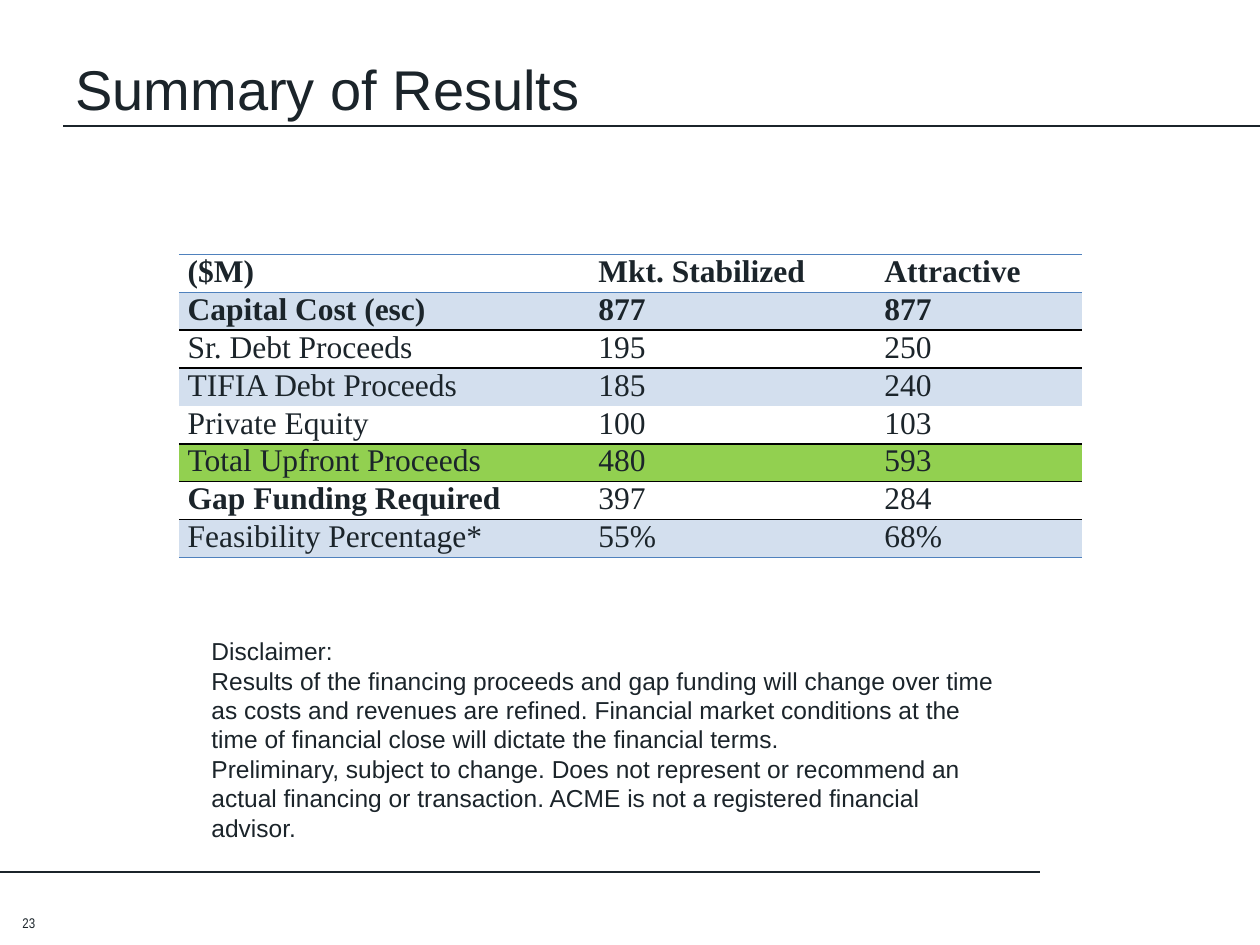
from dataclasses import dataclass

from lxml.etree import SubElement
from pptx import Presentation
from pptx.dml.color import RGBColor
from pptx.enum.shapes import MSO_CONNECTOR
from pptx.enum.text import MSO_ANCHOR
from pptx.oxml import parse_xml
from pptx.oxml.ns import nsdecls, qn
from pptx.util import Inches, Pt


@dataclass(frozen=True)
class Theme:
    ink: str = "1B242A"
    band: str = "D3DFEE"
    total: str = "92D050"
    frame: str = "4F81BD"
    rule: str = "000000"
    sans: str = "Arial"
    narrow: str = "Arial Narrow"
    serif: str = "Times New Roman"
    title_size: int = 32
    table_size: int = 18
    body_size: int = 14
    number_size: int = 8
    line_width: float = 0.75


THEME = Theme()
NO_GRID_STYLE = "{2D5ABB26-0587-4C30-8999-92F81FD0307C}"

TITLE = "Summary of Results"
DISCLAIMER = [
    "Disclaimer:",
    "Results of the financing proceeds and gap funding will change over time as costs "
    "and revenues are refined. Financial market conditions at the time of financial "
    "close will dictate the financial terms.",
    "Preliminary, subject to change. Does not represent or recommend an actual "
    "financing or transaction. ACME is not a registered financial advisor.",
]
PAGE_NUMBER = "23"

# Cell texts, number of leading bold cells, fill, colour of the line below
RESULTS = [
    (("($M)", "Mkt. Stabilized", "Attractive"), 3, None, THEME.frame),
    (("Capital Cost (esc)", "877", "877"), 3, THEME.band, THEME.rule),
    (("Sr. Debt Proceeds", "195", "250"), 0, None, None),
    (("TIFIA Debt Proceeds", "185", "240"), 0, THEME.band, None),
    (("Private Equity", "100", "103"), 0, None, THEME.rule),
    (("Total Upfront Proceeds", "480", "593"), 0, THEME.total, THEME.rule),
    (("Gap Funding Required", "397", "284"), 1, None, None),
    (("Feasibility Percentage*", "55%", "68%"), 0, THEME.band, THEME.frame),
]
COLUMN_WIDTHS = (3.26, 2.27, 1.64)
ROW_HEIGHT = 0.3


def style_font(font, name, size, bold=False):
    font.name = name
    font.size = Pt(size)
    font.bold = bold
    font.color.rgb = RGBColor.from_string(THEME.ink)


def add_text(page, place, texts, name, size, anchor=MSO_ANCHOR.TOP):
    box = page.shapes.add_textbox(*map(Inches, place))
    frame = box.text_frame
    frame.word_wrap = True
    frame.vertical_anchor = anchor
    frame.text = "\n".join(texts)
    for paragraph in frame.paragraphs:
        style_font(paragraph.font, name, size)
    return box


def add_rule(page, start_x, end_x, y):
    line = page.shapes.add_connector(
        MSO_CONNECTOR.STRAIGHT, Inches(start_x), Inches(y), Inches(end_x), Inches(y)
    )
    line.line.color.rgb = RGBColor.from_string(THEME.ink)
    line.line.width = Pt(THEME.line_width)
    SubElement(line._element.spPr, qn("a:effectLst"))


def add_border(cell, edge, color):
    """Draw a 1 pt line on an edge (lnT or lnB), ahead of the cell's fill."""
    border = parse_xml(
        f'<a:{edge} {nsdecls("a")} w="{Pt(1)}"><a:solidFill>'
        f'<a:srgbClr val="{color}"/></a:solidFill></a:{edge}>'
    )
    cell._tc.get_or_add_tcPr().insert(0, border)


def fill_cell(cell, text, bold, fill, above, below):
    cell.margin_left = cell.margin_right = Inches(0.07)
    cell.margin_top = cell.margin_bottom = 0
    cell.text = text
    style_font(cell.text_frame.paragraphs[0].font, THEME.serif, THEME.table_size, bold)
    if fill:
        cell.fill.solid()
        cell.fill.fore_color.rgb = RGBColor.from_string(fill)
    else:
        cell.fill.background()
    for edge, color in (("lnB", below), ("lnT", above)):
        if color:
            add_border(cell, edge, color)


def add_results(page, left, top):
    table = page.shapes.add_table(
        len(RESULTS), len(COLUMN_WIDTHS), Inches(left), Inches(top),
        Inches(sum(COLUMN_WIDTHS)), Inches(ROW_HEIGHT * len(RESULTS)),
    ).table
    table.first_row = table.horz_banding = False
    table._tbl.tblPr.find(qn("a:tableStyleId")).text = NO_GRID_STYLE
    for column, width in zip(table.columns, COLUMN_WIDTHS):
        column.width = Inches(width)
    above = THEME.frame
    for row, (texts, bold_count, fill, below) in zip(table.rows, RESULTS):
        row.height = Inches(ROW_HEIGHT)
        for index, (cell, text) in enumerate(zip(row.cells, texts)):
            fill_cell(cell, text, index < bold_count, fill, above, below)
        above = below


def main():
    deck = Presentation()
    deck.slide_width, deck.slide_height = Inches(10), Inches(7.5)
    page = deck.slides.add_slide(deck.slide_layouts[6])

    add_rule(page, 10, 0.5, 1)
    add_rule(page, 8.25, 0, 6.92)
    title = add_text(page, (0.5, 0.33, 9, 0.92), [TITLE], THEME.sans, THEME.title_size)
    title.text_frame.margin_top = Inches(0.1)
    add_text(page, (1.58, 5, 6.5, 1.51), DISCLAIMER, THEME.sans, THEME.body_size)
    add_text(page, (0.08, 6.92, 0.67, 0.52), [PAGE_NUMBER], THEME.narrow,
             THEME.number_size, MSO_ANCHOR.BOTTOM)
    add_results(page, 1.42, 2.02)
    deck.save("out.pptx")


if __name__ == "__main__":
    main()
